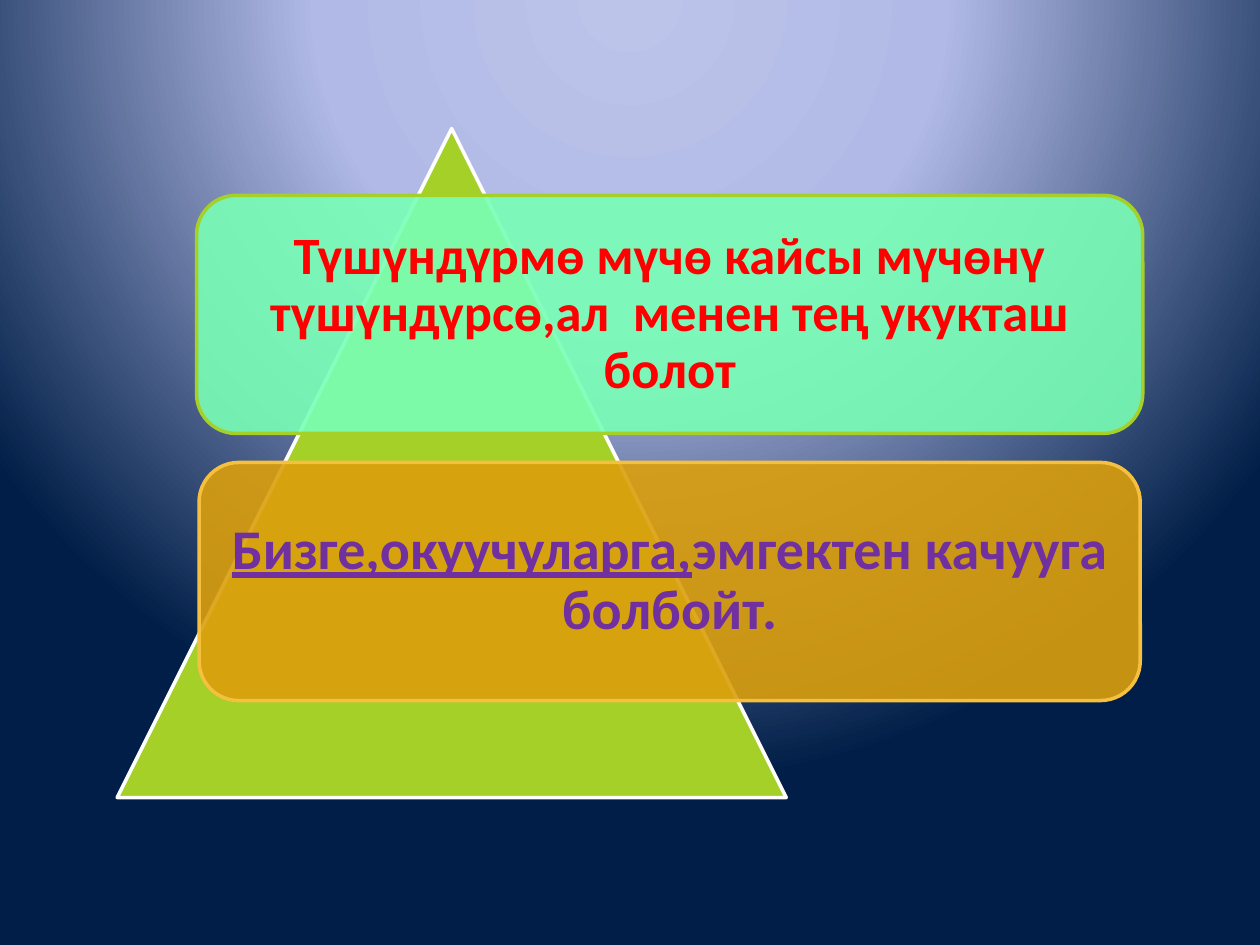
"""Build a slide with two statements laid over a triangle."""
from pptx import Presentation
from pptx.dml.color import RGBColor
from pptx.enum.shapes import MSO_SHAPE
from pptx.enum.text import MSO_ANCHOR, PP_ALIGN
from pptx.oxml import parse_xml
from pptx.oxml.ns import nsdecls, qn
from pptx.util import Inches, Pt

TRIANGLE = MSO_SHAPE.ISOSCELES_TRIANGLE
ROUNDED = MSO_SHAPE.ROUNDED_RECTANGLE
MIDDLE = MSO_ANCHOR.MIDDLE
CENTER = PP_ALIGN.CENTER

FONT = "Calibri"
GLOW = [(0, "BCC4EA"), (40, "B1BAE6"), (100, "001E47")]
PYRAMID = {"at": (0.93, 1.02, 5.31, 5.31), "fill": "A5D028", "line": "FFFFFF"}
STATEMENTS = [
    {"at": (1.56, 1.55, 7.51, 1.89), "fill": "79FFB6", "line": "A5D028",
     "size": 30, "color": "FF0000", "inset": 0.12,
     "runs": [("Түшүндүрмө мүчө кайсы мүчөнү түшүндүрсө,ал  менен тең укукташ болот", False)]},
    {"at": (1.58, 3.67, 7.47, 1.89), "fill": "DC9F0C", "line": "F5C040",
     "size": 32, "color": "7030A0", "inset": 0.13,
     "runs": [("Бизге,окуучуларга,", True), ("эмгектен качууга болбойт.", False)]},
]
OPACITY = 90


def rgb(value):
    """Turn a hex string into a colour."""
    return RGBColor.from_string(value)


def paint_glow(slide):
    """Give the slide a circular gradient centred above its top edge."""
    stops = "".join(f'<a:gs pos="{pos * 1000}"><a:srgbClr val="{color}"/></a:gs>'
                    for pos, color in GLOW)
    slide.element.cSld.insert(0, parse_xml(
        f'<p:bg {nsdecls("p", "a")}><p:bgPr><a:gradFill rotWithShape="1">'
        f'<a:gsLst>{stops}</a:gsLst><a:path path="circle">'
        '<a:fillToRect l="50000" t="-80000" r="50000" b="180000"/></a:path>'
        '</a:gradFill><a:effectLst/></p:bgPr></p:bg>'))


def add_panel(slide, kind, panel):
    """Add a filled and outlined shape."""
    shape = slide.shapes.add_shape(kind, *map(Inches, panel["at"]))
    shape.shadow.inherit = False
    shape.fill.solid()
    shape.fill.fore_color.rgb = rgb(panel["fill"])
    shape.line.color.rgb = rgb(panel["line"])
    shape.line.width = Pt(2)
    return shape


def add_statement(slide, statement):
    """Add a translucent rounded panel holding its statement."""
    panel = add_panel(slide, ROUNDED, statement)
    fill_color = panel.element.spPr.find(qn("a:solidFill"))[0]
    fill_color.append(parse_xml(f'<a:alpha {nsdecls("a")} val="{OPACITY * 1000}"/>'))
    frame = panel.text_frame
    frame.word_wrap = True
    frame.vertical_anchor = MIDDLE
    frame.margin_left = frame.margin_right = Inches(statement["inset"])
    frame.margin_top = frame.margin_bottom = Inches(statement["inset"])
    paragraph = frame.paragraphs[0]
    paragraph.alignment = CENTER
    paragraph.line_spacing = 0.9
    for words, underlined in statement["runs"]:
        run = paragraph.add_run()
        run.text = words
        run.font.name = FONT
        run.font.size = Pt(statement["size"])
        run.font.bold = True
        run.font.underline = underlined
        run.font.color.rgb = rgb(statement["color"])


def main():
    """Assemble and save the slide."""
    deck = Presentation()
    deck.slide_width, deck.slide_height = Inches(10), Inches(7.5)
    slide = deck.slides.add_slide(deck.slide_layouts[6])
    paint_glow(slide)
    add_panel(slide, TRIANGLE, PYRAMID)
    for statement in STATEMENTS:
        add_statement(slide, statement)
    deck.save("out.pptx")


if __name__ == "__main__":
    main()
